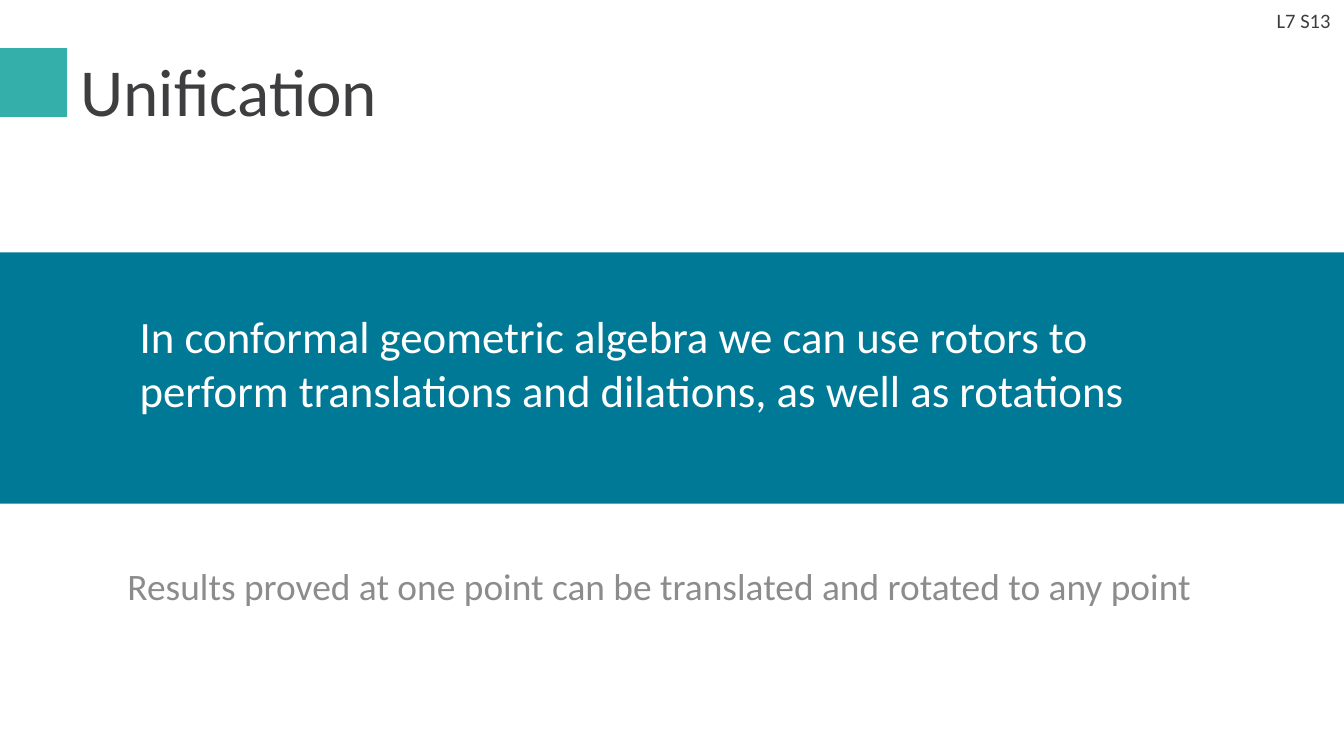
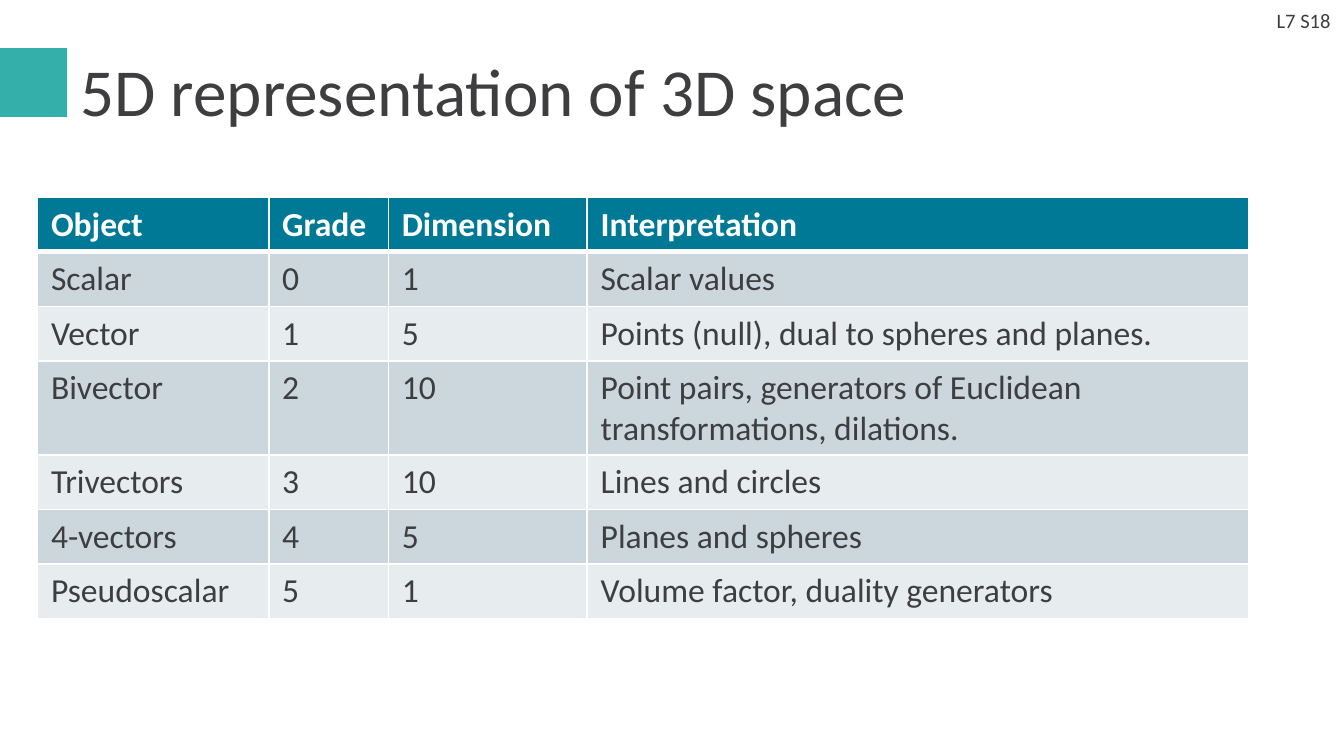
from dataclasses import dataclass

from lxml import etree
from pptx import Presentation
from pptx import util as u
from pptx.dml.color import RGBColor
from pptx.enum import shapes, text
from pptx.oxml import ns


@dataclass(frozen=True)
class Theme:
    font: str = "Calibri"
    ink: str = "3E3E40"
    white: str = "FFFFFF"
    grey: str = "8C8C8C"
    accent: str = "35AFA9"
    band: str = "007997"
    row_fills: tuple = ("CCD7DD", "E7ECEF")
    title_size: int = 36
    statement_size: int = 24
    remark_size: int = 20
    table_size: int = 18
    label_size: int = 11


WIDTH, HEIGHT = 25.4, 14.29
PADDED = (0.25, 0.13, 0.25, 0.13)
FLUSH = (0.2, 0, 0, 0)


class SlideBuilder:
    def __init__(self, theme):
        self.theme = theme
        self.deck = Presentation()
        self.deck.slide_width = u.Cm(WIDTH)
        self.deck.slide_height = u.Cm(HEIGHT)
        self.slide = None

    def new_slide(self, title, label):
        theme = self.theme
        self.slide = self.deck.slides.add_slide(self.deck.slide_layouts[6])
        self.rectangle((0, 0.91, 1.27, 1.3), theme.accent)
        self.text_box((1.27, 0.79, 22.86, 1.8), title, theme.title_size, theme.ink,
                      frame_format={"vertical_anchor": text.MSO_ANCHOR.MIDDLE})
        corner = self.rectangle((19.48, 0, 5.92, 0.76), theme.white)
        self.set_text(corner.text_frame, label, theme.label_size, theme.ink,
                      frame_format={"vertical_anchor": text.MSO_ANCHOR.MIDDLE},
                      para_format={"alignment": text.PP_ALIGN.RIGHT})

    def rectangle(self, place, fill):
        shape = self.slide.shapes.add_shape(shapes.MSO_SHAPE.RECTANGLE, *map(u.Cm, place))
        shape.shadow.inherit = False
        shape.fill.solid()
        shape.fill.fore_color.rgb = RGBColor.from_string(fill)
        shape.line.fill.background()
        return shape

    def text_box(self, place, words, size, color, **formats):
        box = self.slide.shapes.add_textbox(*map(u.Cm, place))
        self.set_text(box.text_frame, words, size, color, **formats)

    def body_text(self, place, words, size, color):
        self.text_box(place, words, size, color, insets=FLUSH,
                      frame_format={"auto_size": text.MSO_AUTO_SIZE.SHAPE_TO_FIT_TEXT},
                      para_format={"space_after": u.Pt(6)})

    def set_text(self, frame, words, size, color, bold=False, insets=PADDED,
                 frame_format=None, para_format=None):
        sides = ("margin_left", "margin_top", "margin_right", "margin_bottom")
        margins = dict(zip(sides, map(u.Cm, insets)))
        para = frame.paragraphs[0]
        span = para.add_run()
        span.text = words
        font_format = {"name": self.theme.font, "size": u.Pt(size), "bold": bold}
        for target, values in (
            (frame, {"word_wrap": True, **margins, **(frame_format or {})}),
            (para, {"alignment": text.PP_ALIGN.LEFT, **(para_format or {})}),
            (span.font, font_format),
        ):
            for name, value in values.items():
                setattr(target, name, value)
        span.font.color.rgb = RGBColor.from_string(color)

    def table(self, left, top, column_widths, row_height, rows):
        theme = self.theme
        table = self.slide.shapes.add_table(
            len(rows), len(column_widths), u.Cm(left), u.Cm(top),
            u.Cm(sum(column_widths)), u.Cm(row_height * len(rows))).table
        for column, width in zip(table.columns, column_widths):
            column.width = u.Cm(width)
        for index, words_in_row in enumerate(rows):
            header = index == 0
            fill = theme.band if header else theme.row_fills[(index - 1) % 2]
            color = theme.white if header else theme.ink
            borders = {"L": 1, "R": 1, "T": 3 if index == 1 else 1, "B": 3 if header else 1}
            table.rows[index].height = u.Cm(row_height)
            for cell, words in zip(table.rows[index].cells, words_in_row):
                self.set_text(cell.text_frame, words, theme.table_size, color, bold=header)
                self.border(cell, borders)
                cell.fill.solid()
                cell.fill.fore_color.rgb = RGBColor.from_string(fill)

    def border(self, cell, borders):
        properties = cell._tc.get_or_add_tcPr()
        for side, width in borders.items():
            line = etree.SubElement(properties, ns.qn(f"a:ln{side}"), w=str(u.Pt(width)))
            solid = etree.SubElement(line, ns.qn("a:solidFill"))
            etree.SubElement(solid, ns.qn("a:srgbClr"), val=self.theme.white)


def main():
    theme = Theme()
    builder = SlideBuilder(theme)

    builder.new_slide("Unification", "L7 S13")
    builder.rectangle((0, 4.77, WIDTH, 4.75), theme.band)
    builder.body_text(
        (2.44, 5.84, 20.62, 2.06),
        "In conformal geometric algebra we can use rotors to perform "
        "translations and dilations, as well as rotations",
        theme.statement_size, theme.white)
    builder.body_text(
        (2.21, 10.64, 21, 0.86),
        "Results proved at one point can be translated and rotated to any point",
        theme.remark_size, theme.grey)

    builder.new_slide("5D representation of 3D space", "L7 S18")
    builder.table(0.71, 3.73, (4.37, 2.26, 3.76, 12.5), 1.03, (
        ("Object", "Grade", "Dimension", "Interpretation"),
        ("Scalar", "0", "1", "Scalar values"),
        ("Vector", "1", "5", "Points (null), dual to spheres and planes."),
        ("Bivector", "2", "10",
         "Point pairs, generators of Euclidean transformations, dilations."),
        ("Trivectors", "3", "10", "Lines and circles"),
        ("4-vectors", "4", "5", "Planes and spheres"),
        ("Pseudoscalar", "5", "1", "Volume factor, duality generators"),
    ))

    builder.deck.save("out.pptx")


if __name__ == "__main__":
    main()
